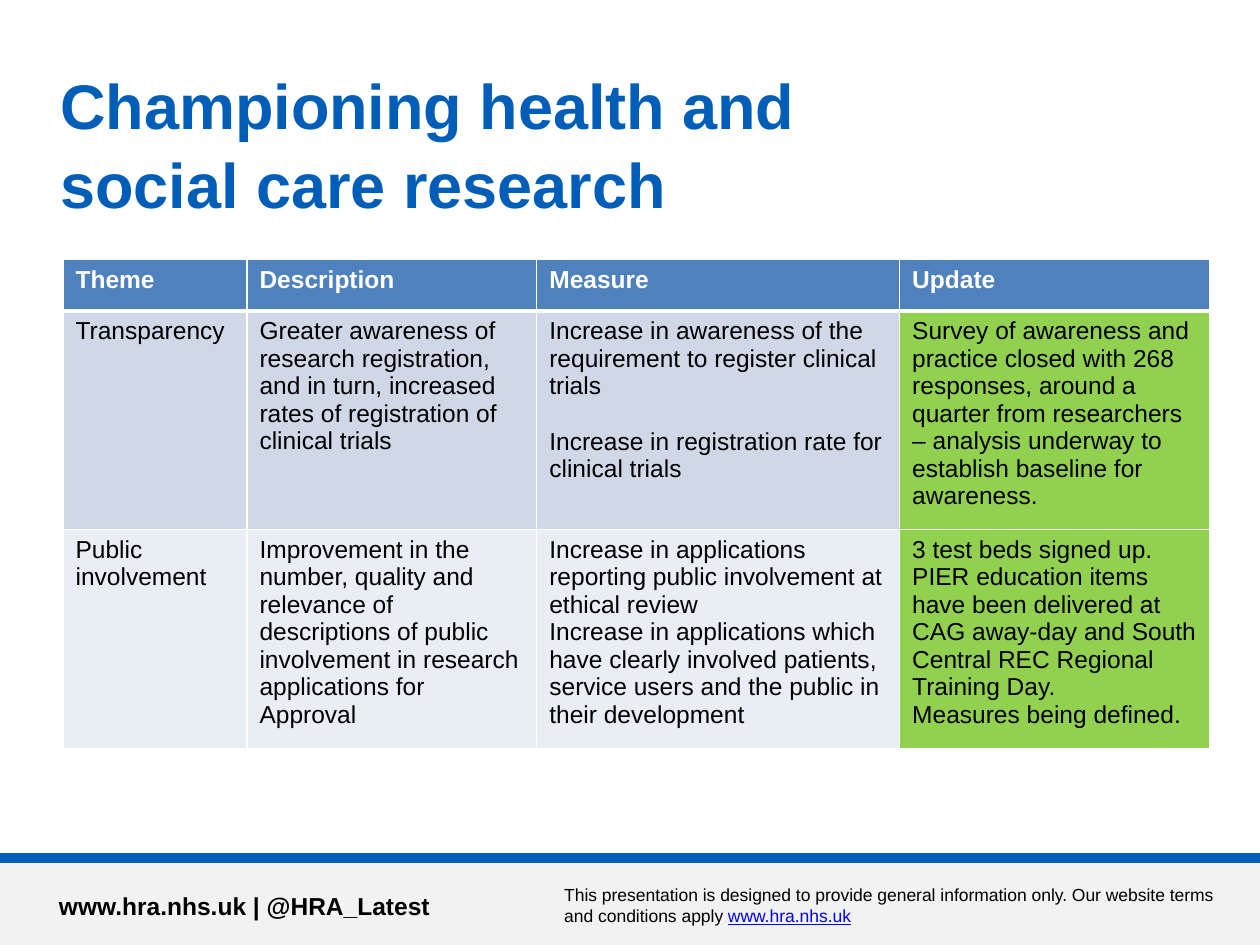
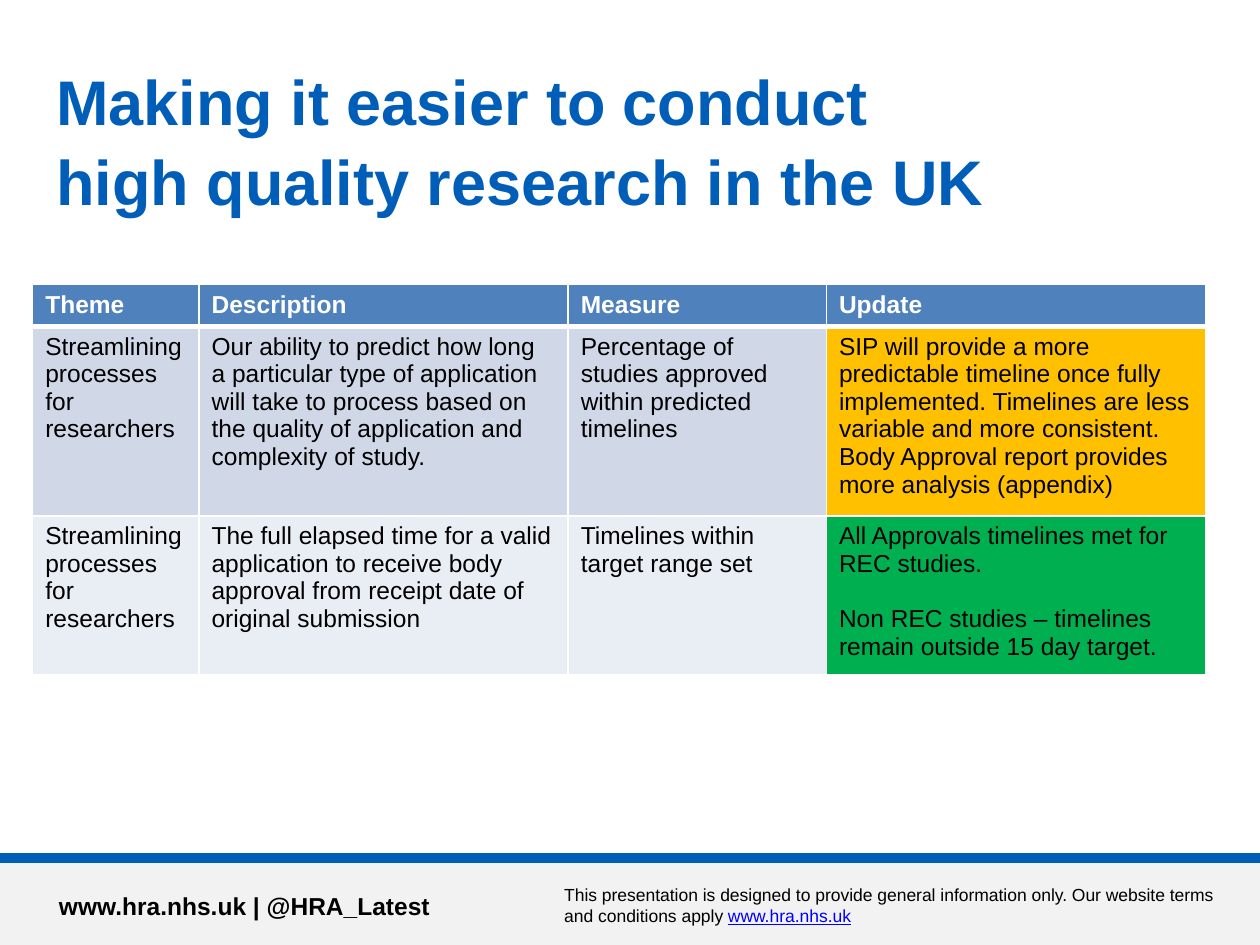
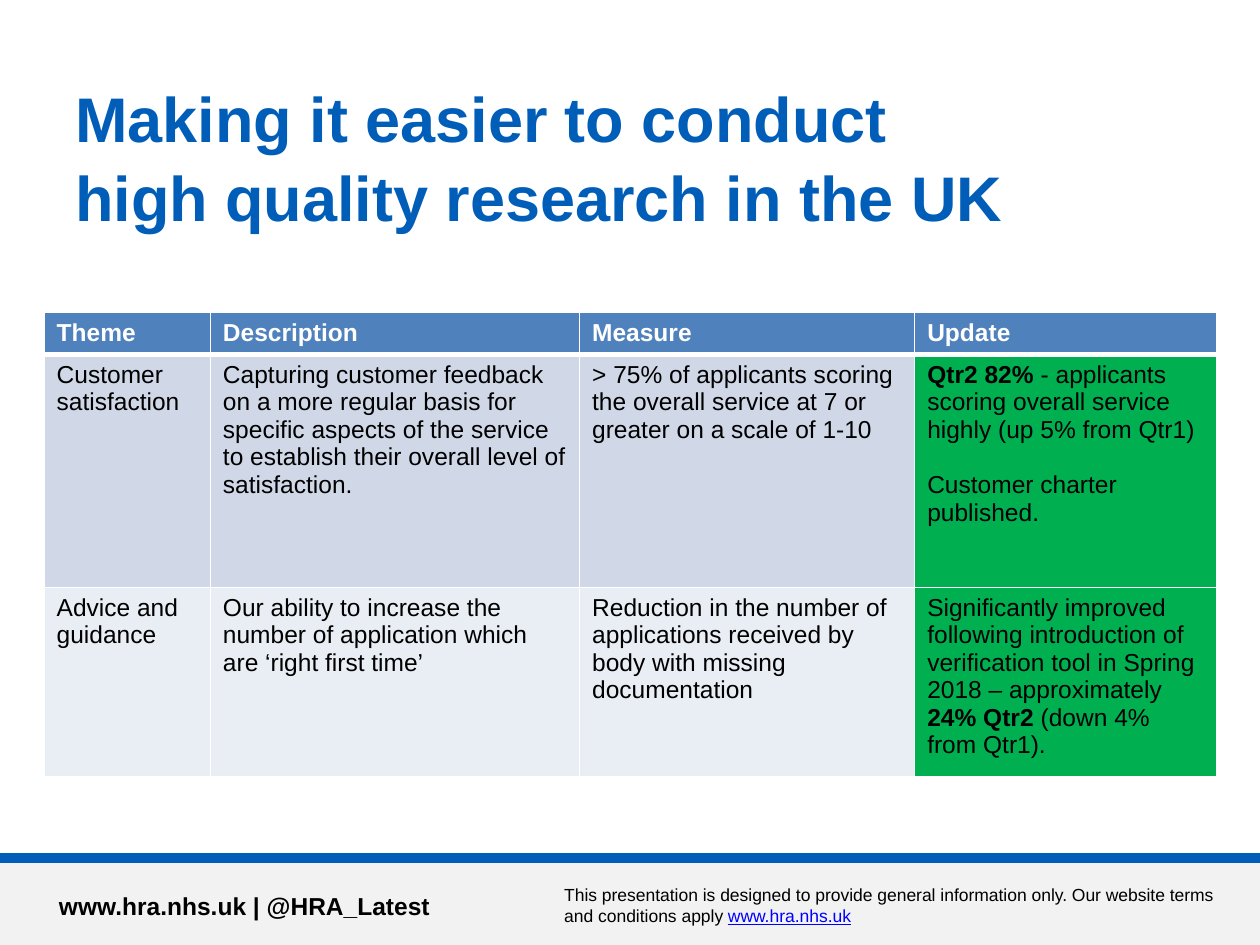
"""Build three slides of research themes, measures and updates."""
from lxml import etree
from pptx import Presentation
from pptx.dml.color import RGBColor
from pptx.enum.shapes import MSO_CONNECTOR, MSO_SHAPE
from pptx.oxml import parse_xml
from pptx.oxml.ns import nsdecls, qn
from pptx.util import Inches, Pt

RECTANGLE = MSO_SHAPE.RECTANGLE
STRAIGHT = MSO_CONNECTOR.STRAIGHT

COLOURS = {
    "brand": "005EB8", "band": "F2F2F2", "link": "0000FF", "black": "000000",
    "white": "FFFFFF", "header": "4F81BD", "odd": "D0D8E8", "even": "E9EDF4",
    "lime": "92D050", "amber": "FFC000", "green": "00B050",
}
FORMATS = {
    "title": {"size": Pt(36), "bold": True, "colour": "brand"},
    "address": {"size": Pt(14), "bold": True, "colour": "black"},
    "notice": {"size": Pt(10), "bold": False, "colour": "black"},
    "link": {"size": Pt(10), "bold": False, "underline": True, "colour": "link"},
    "header": {"size": Pt(14), "bold": True, "colour": "white"},
    "body": {"size": Pt(14), "bold": False, "colour": "black"},
    "strong": {"size": Pt(14), "bold": True, "colour": "black"},
}
HEADINGS = ["Theme", "Description", "Measure", "Update"]
PARAGRAPH_GAP = Pt(16)

PAGES = [
    {
        "title": ["Championing health and ", "social care research"],
        "title_at": (0.38, 0.45),
        "table_at": (0.5, 2.06),
        "columns": [1.46, 2.3, 2.88, 2.46],
        "rows": [0.41, 1.63, 1.62],
        "statuses": ["lime", "lime"],
        "cells": [
            ["Transparency",
             "Greater awareness of research registration, and in turn, increased rates "
             "of registration of clinical trials",
             "Increase in awareness of the requirement to register clinical trials\n\n"
             "Increase in registration rate for clinical trials",
             "Survey of awareness and practice closed with 268 responses, around a quarter "
             "from researchers – analysis underway to establish baseline for awareness."],
            ["Public involvement",
             "Improvement in the number, quality and relevance of descriptions of public "
             "involvement in research applications for Approval",
             "Increase in applications reporting public involvement at ethical review\n"
             "Increase in applications which have clearly involved patients, service users "
             "and the public in their development",
             "3 test beds signed up.\n"
             "PIER education items have been delivered at CAG away-day and South Central "
             "REC Regional Training Day.\n"
             "Measures being defined."],
        ],
    },
    {
        "title": ["Making it easier to conduct ", "high quality research in the UK"],
        "title_at": (0.35, 0.42),
        "table_at": (0.26, 2.26),
        "columns": [1.32, 2.93, 2.05, 3.01],
        "rows": [0.31, 1.41, 1.19],
        "statuses": ["amber", "green"],
        "cells": [
            ["Streamlining processes for researchers",
             "Our ability to predict how long a particular type of application will take "
             "to process based on the quality of application and complexity of study.",
             "Percentage of studies approved within predicted timelines",
             "SIP will provide a more predictable timeline once fully implemented. "
             "Timelines are less variable and more consistent. Body Approval report "
             "provides more analysis (appendix)"],
            ["Streamlining processes for researchers",
             "The full elapsed time for a valid application to receive body approval from "
             "receipt date of original submission",
             "Timelines within target range set",
             "All Approvals timelines met for REC studies.\n\n"
             "Non REC studies – timelines remain outside 15 day target."],
        ],
    },
    {
        "title": ["Making it easier to conduct ", "high quality research in the UK"],
        "title_at": (0.5, 0.55),
        "table_at": (0.35, 2.48),
        "columns": [1.32, 2.93, 2.66, 2.4],
        "rows": [0.31, 1.85, 1.41],
        "statuses": ["green", "green"],
        "cells": [
            ["Customer satisfaction",
             "Capturing customer feedback on a more regular basis for specific aspects of "
             "the service to establish their overall level of satisfaction.",
             "> 75% of applicants scoring the overall service at 7 or greater on a scale of 1-10",
             "*Qtr2 82% *- applicants scoring overall service highly (up 5% from Qtr1)\n\n"
             "Customer charter published."],
            ["Advice and guidance",
             "Our ability to increase the number of application which are ‘right first time’",
             "Reduction in the number of applications received by body with missing documentation",
             "Significantly improved following introduction of verification tool in Spring "
             "2018 – approximately *24% Qtr2 *(down 4% from Qtr1)."],
        ],
    },
]


def add_span(para, text, style):
    span = para.add_run()
    span.text = text
    span.font.name = "Arial"
    for name, value in FORMATS[style].items():
        if name == "colour":
            span.font.color.rgb = RGBColor.from_string(COLOURS[value])
        else:
            setattr(span.font, name, value)


def add_text_box(page, left, top, width, height):
    box = page.shapes.add_textbox(Inches(left), Inches(top), Inches(width), Inches(height))
    box.text_frame.word_wrap = True
    return box.text_frame.paragraphs[0]


deck = Presentation()
deck.slide_width, deck.slide_height = Inches(10), Inches(7.5)

for content in PAGES:
    page = deck.slides.add_slide(deck.slide_layouts[6])

    band = page.shapes.add_shape(RECTANGLE, 0, Inches(6.81), Inches(10), Inches(0.69))
    band.shadow.inherit = False
    band.fill.solid()
    band.fill.fore_color.rgb = RGBColor.from_string(COLOURS["band"])
    band.line.fill.background()

    rule = page.shapes.add_connector(STRAIGHT, 0, Inches(6.81), Inches(10), Inches(6.81))
    rule.line.width = Pt(6)
    rule.line.color.rgb = RGBColor.from_string(COLOURS["brand"])
    etree.SubElement(rule._element.spPr, qn("a:effectLst"))

    address = add_text_box(page, 0.37, 7.02, 5.84, 0.4)
    add_span(address, "www.hra.nhs.uk | @HRA_Latest", "address")

    notice = add_text_box(page, 4.38, 6.97, 5.4, 0.5)
    add_span(notice, "This presentation is designed to provide general information only. "
             "Our website terms and conditions apply ", "notice")
    add_span(notice, "www.hra.nhs.uk", "link")

    title = add_text_box(page, *content["title_at"], 8.5, 0.74)
    title.line_spacing = 1.05
    first_line, second_line = content["title"]
    add_span(title, first_line, "title")
    title.add_line_break()
    add_span(title, second_line, "title")

    columns, rows = content["columns"], content["rows"]
    left, top = content["table_at"]
    table = page.shapes.add_table(len(rows), len(columns), Inches(left), Inches(top),
                                  Inches(sum(columns)), Inches(sum(rows))).table
    for column, width in zip(table.columns, columns):
        column.width = Inches(width)
    for row, height in zip(table.rows, rows):
        row.height = Inches(height)

    fills = [["header"] * 4]
    for shade, status in zip(["odd", "even"], content["statuses"]):
        fills.append([shade] * 3 + [status])

    for row_index, texts in enumerate([HEADINGS] + content["cells"]):
        plain = "body" if row_index else "header"
        borders = {"lnL": 1, "lnR": 1, "lnT": 3 if row_index == 1 else 1,
                   "lnB": 1 if row_index else 3}
        for column_index, text in enumerate(texts):
            cell = table.cell(row_index, column_index)
            cell.fill.solid()
            fill = COLOURS[fills[row_index][column_index]]
            cell.fill.fore_color.rgb = RGBColor.from_string(fill)
            properties = cell._tc.get_or_add_tcPr()
            for position, (side, points) in enumerate(borders.items()):
                properties.insert(position, parse_xml(
                    f'<a:{side} {nsdecls("a")} w="{Pt(points)}"><a:solidFill>'
                    f'<a:srgbClr val="{COLOURS["white"]}"/></a:solidFill></a:{side}>'))

            para = cell.text_frame.paragraphs[0]
            for block_index, block in enumerate(text.split("\n\n")):
                for line_index, line in enumerate(block.split("\n")):
                    if block_index or line_index:
                        para = cell.text_frame.add_paragraph()
                    if block_index and not line_index:
                        para.space_before = PARAGRAPH_GAP
                    for part_index, part in enumerate(line.split("*")):
                        if part:
                            add_span(para, part, "strong" if part_index % 2 else plain)

deck.save("out.pptx")
